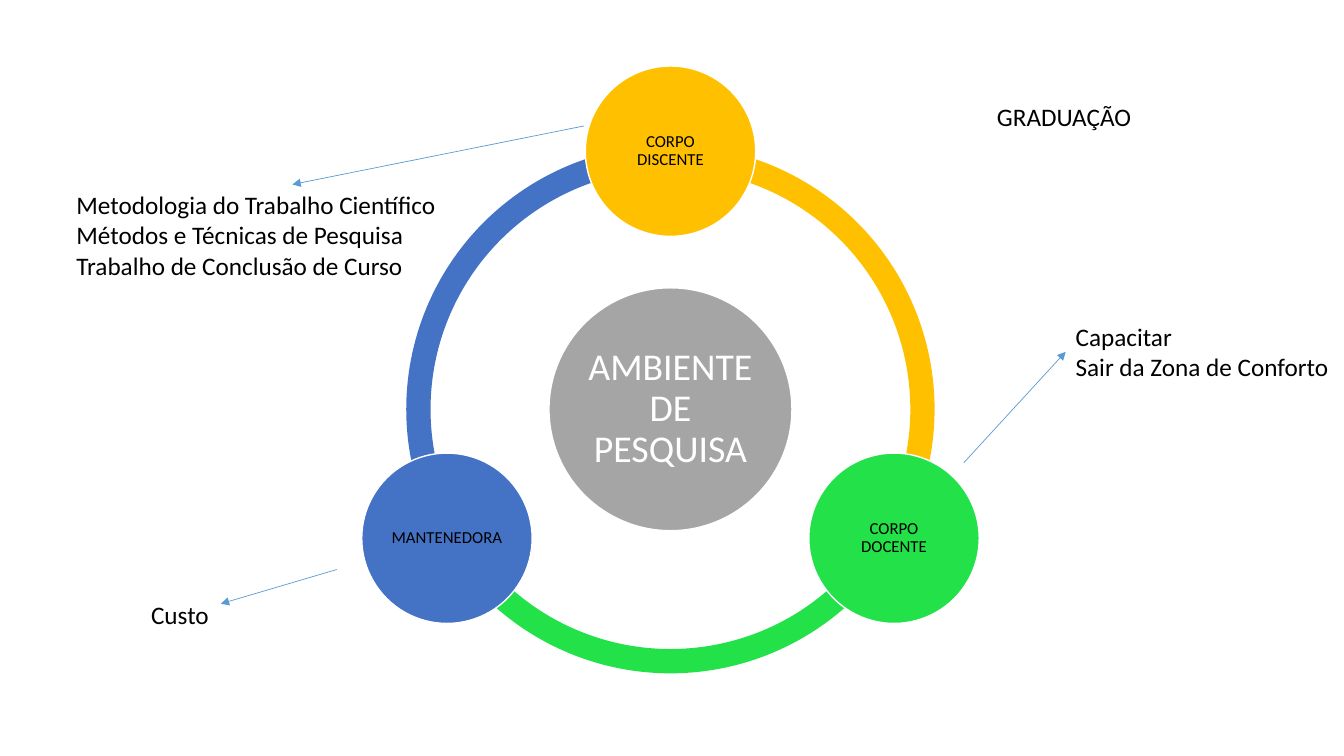
import math
import lxml.etree
import pptx
import pptx.util
import pptx.oxml.ns
import pptx.dml.color
import pptx.enum.shapes
import pptx.enum.text

Inches = pptx.util.Inches
Pt = pptx.util.Pt
RGBColor = pptx.dml.color.RGBColor
MSO_SHAPE = pptx.enum.shapes.MSO_SHAPE
qn = pptx.oxml.ns.qn

BLUE = RGBColor(0x44, 0x72, 0xC4)
GREEN = RGBColor(0x23, 0xE1, 0x48)
YELLOW = RGBColor(0xFF, 0xC0, 0x00)
GRAY = RGBColor(0xA5, 0xA5, 0xA5)
ARROW = RGBColor(0x5B, 0x9B, 0xD5)
WHITE = RGBColor(0xFF, 0xFF, 0xFF)
BLACK = RGBColor(0x00, 0x00, 0x00)
FONT = "Calibri"

CENTER = "AMBIENTE DE PESQUISA"
GROUPS = [
    ("CORPO DISCENTE", YELLOW, 270),
    ("CORPO DOCENTE", GREEN, 30),
    ("MANTENEDORA", BLUE, 150),
]
NOTES = [
    (["Metodologia do Trabalho Científico", "Métodos e Técnicas de Pesquisa",
      "Trabalho de Conclusão de Curso"], 0.66, 1.83, 3.81, 1.01),
    (["Custo"], 1.4, 5.9, 0.78, 0.4),
    (["Capacitar", "Sair da Zona de Conforto"], 10.57, 3.14, 2.74, 0.71),
    (["GRADUAÇÃO"], 9.79, 0.96, 1.54, 0.4),
]
ARROWS = [
    (5.79, 1.25, 2.9, 1.83),
    (3.34, 5.65, 2.19, 5.99),
    (9.56, 4.59, 10.57, 3.49),
]

CX, CY = 6.65, 4.06
RING_SIZE, RING_THICKNESS = 5.24, 0.046
ORBIT = 2.56
HUB_SIZE, GROUP_SIZE = 2.41, 1.69


def add_round(s, kind, cx, cy, size, color):
    sp = s.shapes.add_shape(kind, Inches(cx - size / 2), Inches(cy - size / 2),
                            Inches(size), Inches(size))
    sp.shadow.inherit = False
    sp.fill.solid()
    sp.fill.fore_color.rgb = color
    sp.line.fill.background()
    return sp


def add_arc(s, start, color):
    sp = add_round(s, MSO_SHAPE.BLOCK_ARC, CX, CY, RING_SIZE, color)
    sp.adjustments[0] = start * 0.6
    sp.adjustments[1] = (start + 120) % 360 * 0.6
    sp.adjustments[2] = RING_THICKNESS


def set_font(p, size, color):
    p.font.name = FONT
    p.font.size = Pt(size)
    p.font.color.rgb = color


def add_circle(s, text, cx, cy, size, color, font_size, font_color, inset):
    sp = add_round(s, MSO_SHAPE.OVAL, cx, cy, size, color)
    sp.line.color.rgb = WHITE
    sp.line.width = Pt(1)
    tf = sp.text_frame
    tf.word_wrap = True
    tf.vertical_anchor = pptx.enum.text.MSO_ANCHOR.MIDDLE
    tf.margin_left = tf.margin_right = Inches(inset)
    tf.margin_top = tf.margin_bottom = Inches(inset)
    p = tf.paragraphs[0]
    p.text = text
    p.alignment = pptx.enum.text.PP_ALIGN.CENTER
    p.line_spacing = 0.9
    set_font(p, font_size, font_color)


def add_note(s, lines, x, y, w, h):
    tf = s.shapes.add_textbox(Inches(x), Inches(y), Inches(w), Inches(h)).text_frame
    tf.word_wrap = False
    tf.auto_size = pptx.enum.text.MSO_AUTO_SIZE.SHAPE_TO_FIT_TEXT
    tf.text = "\n".join(lines)
    for p in tf.paragraphs:
        set_font(p, 18, BLACK)


def add_arrow(s, *ends):
    line = s.shapes.add_connector(pptx.enum.shapes.MSO_CONNECTOR.STRAIGHT,
                                  *[Inches(v) for v in ends])
    line.line.color.rgb = ARROW
    line.line.width = Pt(0.5)
    spPr = line._element.spPr
    lxml.etree.SubElement(spPr.find(qn("a:ln")), qn("a:tailEnd"), type="triangle")
    lxml.etree.SubElement(spPr, qn("a:effectLst"))


def main():
    prs = pptx.Presentation()
    prs.slide_width, prs.slide_height = Inches(13.33), Inches(7.5)
    s = prs.slides.add_slide(prs.slide_layouts[6])
    for _, color, angle in reversed(GROUPS):
        add_arc(s, angle, color)
    add_circle(s, CENTER, CX, CY, HUB_SIZE, GRAY, 27, WHITE, 0.03)
    for name, color, angle in GROUPS:
        a = math.radians(angle)
        add_circle(s, name, CX + ORBIT * math.cos(a), CY + ORBIT * math.sin(a),
                   GROUP_SIZE, color, 12, BLACK, 0.02)
    for ends in ARROWS:
        add_arrow(s, *ends)
    for note in NOTES:
        add_note(s, *note)
    prs.save("out.pptx")


if __name__ == "__main__":
    main()
